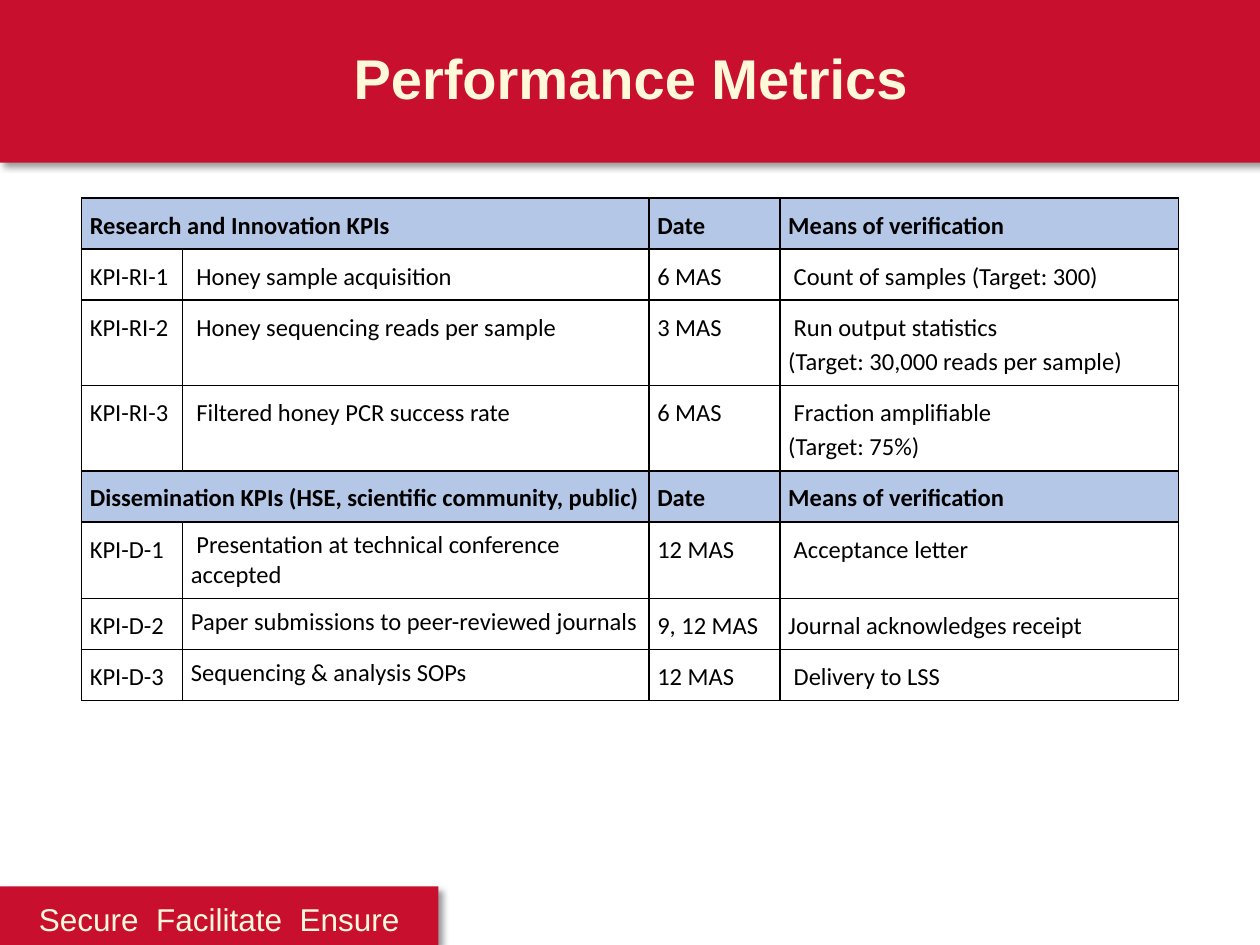
from lxml import etree
from pptx import Presentation
from pptx.dml.color import RGBColor
from pptx.enum.shapes import MSO_SHAPE as Shape
from pptx.enum.text import MSO_ANCHOR as Anchor, PP_ALIGN as Align
from pptx.oxml import parse_xml
from pptx.oxml.ns import nsdecls, qn
from pptx.util import Cm, Pt

# Content
TITLE = "Performance Metrics"
MOTTO = "Secure  Facilitate  Ensure"
# Each section: heading, then rows of (code, indicator, date, verification)
SECTIONS = [
    ("Research and Innovation KPIs", [
        ("KPI-RI-1", "Honey sample acquisition", "6 MAS",
         "Count of samples (Target: 300)"),
        ("KPI-RI-2", "Honey sequencing reads per sample", "3 MAS",
         "Run output statistics\n(Target: 30,000 reads per sample)"),
        ("KPI-RI-3", "Filtered honey PCR success rate", "6 MAS",
         "Fraction amplifiable\n(Target: 75%)"),
    ]),
    ("Dissemination KPIs (HSE, scientific community, public)", [
        ("KPI-D-1", "Presentation at technical conference accepted", "12 MAS",
         "Acceptance letter"),
        ("KPI-D-2", "Paper submissions to peer-reviewed journals", "9, 12 MAS",
         "Journal acknowledges receipt"),
        ("KPI-D-3", "Sequencing & analysis SOPs", "12 MAS", "Delivery to LSS"),
    ]),
]
FLUSH = {("KPI-D-2", 1), ("KPI-D-2", 3), ("KPI-D-3", 1)}  # no first-line indent
SINGLE_SPACED = {("KPI-D-1", 1), ("KPI-D-2", 1), ("KPI-D-3", 1)}

COLORS = {"red": "C8102E", "cream": "FFF9D9", "header": "B4C7E7", "black": "000000"}
COLUMN_WIDTHS = [2.04, 9.4, 2.64, 8.04]
ROW_HEIGHTS = [1.03, 1.03, 1.72, 1.72, 1.03, 1.54, 1.03, 1.03]
TABLE_LEFT, TABLE_TOP = 1.64, 3.99
CELL_MARGIN = Cm(0.17)
FIRST_LINE_INDENT = Cm(0.11)


def color(name):
    return RGBColor.from_string(COLORS[name])


def style(paragraph, font_name, size, color_name, bold=False):
    for run in paragraph.runs:
        font = run.font
        font.name, font.size, font.bold = font_name, Pt(size), bold
        font.color.rgb = color(color_name)


def add_bar(slide, top, width, height):
    bar = slide.shapes.add_shape(Shape.RECTANGLE, 0, Cm(top), Cm(width), Cm(height))
    bar.fill.solid()
    bar.fill.fore_color.rgb = color("red")
    bar.line.fill.background()
    bar.shadow.inherit = False
    effects = bar.element.spPr.find(qn("a:effectLst"))
    effects.append(parse_xml(
        f'<a:outerShdw {nsdecls("a")} blurRad="{Pt(4)}" dist="{Pt(3)}" dir="2700000" '
        f'algn="tl" rotWithShape="0"><a:srgbClr val="{COLORS["black"]}">'
        '<a:alpha val="40000"/></a:srgbClr></a:outerShdw>'))
    return bar


def add_borders(cell):
    properties = cell._tc.get_or_add_tcPr()
    for position, side in enumerate(("lnL", "lnR", "lnT", "lnB")):
        line = etree.Element(qn(f"a:{side}"), w=str(Pt(1)))
        fill = etree.SubElement(line, qn("a:solidFill"))
        etree.SubElement(fill, qn("a:srgbClr"), val=COLORS["black"])
        properties.insert(position, line)


def fill_cell(cell, text, header=False, indent=False, single_spaced=False):
    cell.margin_left = cell.margin_right = CELL_MARGIN
    cell.margin_top = cell.margin_bottom = CELL_MARGIN
    cell.vertical_anchor = Anchor.TOP
    if header:
        cell.fill.solid()
        cell.fill.fore_color.rgb = color("header")
    else:
        cell.fill.background()
    add_borders(cell)
    cell.text_frame.text = text
    for number, paragraph in enumerate(cell.text_frame.paragraphs):
        paragraph.alignment = Align.LEFT if single_spaced else Align.JUSTIFY
        paragraph.line_spacing = 1.0 if single_spaced else 1.15
        if indent and number == 0:
            properties = paragraph._p.get_or_add_pPr()
            properties.set("marL", "0")
            properties.set("indent", str(FIRST_LINE_INDENT))
        style(paragraph, "Calibri", 14, "black", bold=header)


presentation = Presentation()
presentation.slide_width, presentation.slide_height = Cm(25.4), Cm(19.05)
slide = presentation.slides.add_slide(presentation.slide_layouts[6])

# Title band
add_bar(slide, 0, 25.4, 3.28)
title = slide.shapes.add_textbox(Cm(2.56), Cm(0.75), Cm(20.32), Cm(1.63))
title.text_frame.word_wrap = True
title.text_frame.text = TITLE
paragraph = title.text_frame.paragraphs[0]
paragraph.alignment = Align.CENTER
style(paragraph, "Arial", 32, "cream", bold=True)

# Footer motto
footer = add_bar(slide, 17.87, 8.84, 1.18)
footer.text_frame.vertical_anchor = Anchor.TOP
footer.text_frame.text = MOTTO
paragraph = footer.text_frame.paragraphs[0]
paragraph.alignment = Align.CENTER
paragraph.line_spacing = 1.19
style(paragraph, "Arial", 18, "cream")

# KPI table
table = slide.shapes.add_table(
    len(ROW_HEIGHTS), len(COLUMN_WIDTHS), Cm(TABLE_LEFT), Cm(TABLE_TOP),
    Cm(sum(COLUMN_WIDTHS)), Cm(sum(ROW_HEIGHTS))).table
table.first_row = table.horz_banding = False
for column, width in zip(table.columns, COLUMN_WIDTHS):
    column.width = Cm(width)
for row, height in zip(table.rows, ROW_HEIGHTS):
    row.height = Cm(height)

row_index = 0
for heading, metrics in SECTIONS:
    headings = (heading, "", "Date", "Means of verification")
    for column_index, text in enumerate(headings):
        fill_cell(table.cell(row_index, column_index), text, header=True)
    table.cell(row_index, 0).merge(table.cell(row_index, 1))
    for row_index, metric in enumerate(metrics, start=row_index + 1):
        for column_index, text in enumerate(metric):
            key = (metric[0], column_index)
            fill_cell(table.cell(row_index, column_index), text,
                      indent=column_index in (1, 3) and key not in FLUSH,
                      single_spaced=key in SINGLE_SPACED)
    row_index += 1

presentation.save("out.pptx")
